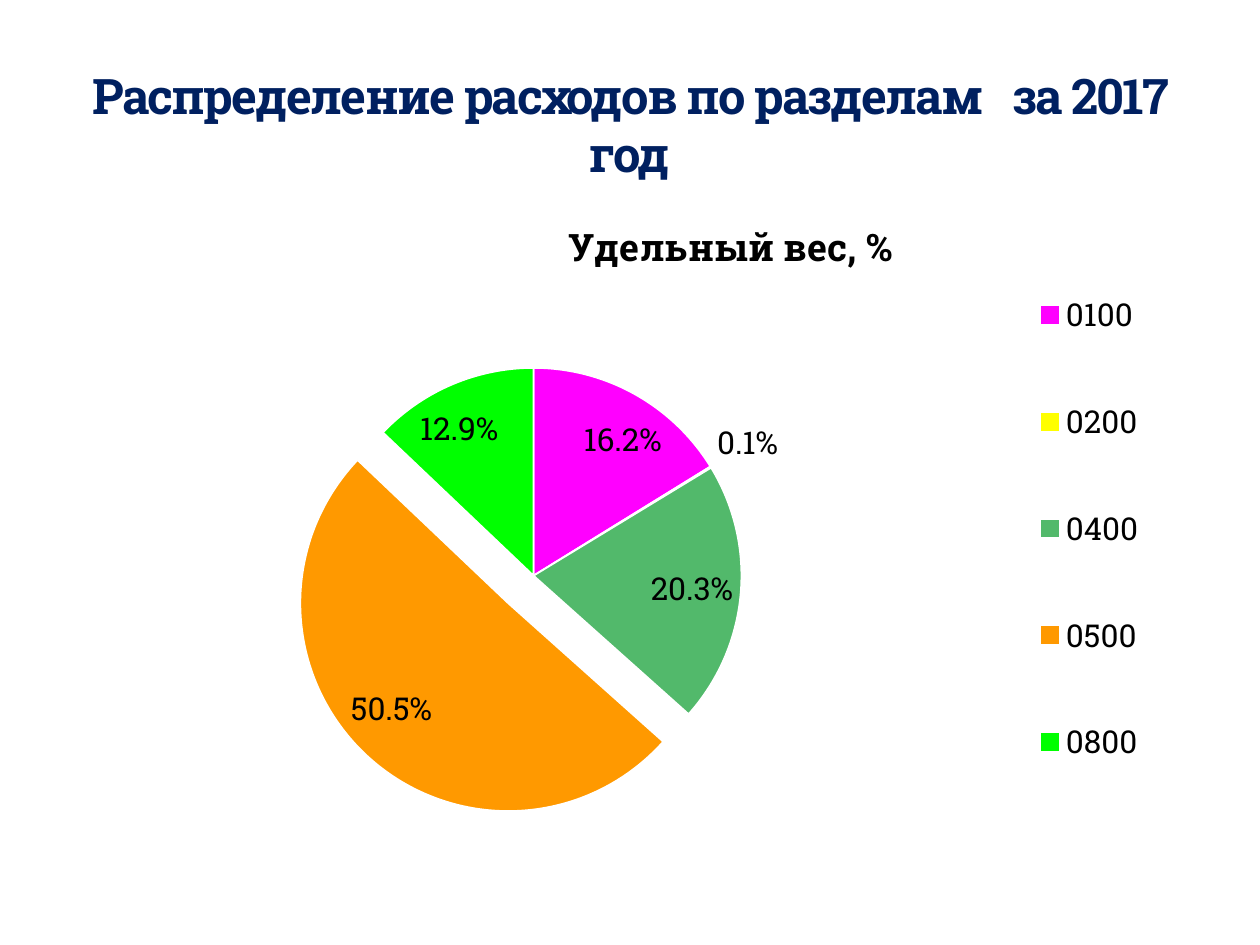
import pptx
import pptx.chart.data
import pptx.dml.color
import pptx.enum.chart
import pptx.enum.text
import pptx.oxml
import pptx.oxml.ns
import pptx.util
from pptx.util import Inches

FONT = "Roboto Slab"
SECTIONS = [
    ("0100", 0.162, "FF00FF"),
    ("0200", 0.001, "FFFF00"),
    ("0400", 0.203, "52B96B"),
    ("0500", 0.505, "FF9900"),
    ("0800", 0.129, "00FF00"),
]
EXPLODED = "0500"


def rgb(color):
    return pptx.dml.color.RGBColor.from_string(color)


def format_font(font, size, color="000000", bold=False):
    font.name = FONT
    font.size = pptx.util.Pt(size)
    font.bold = bold
    font.color.rgb = rgb(color)


def write_text(tf, text, size=18, color="000000", bold=False, spacing=0):
    p = tf.paragraphs[0]
    p.alignment = pptx.enum.text.PP_ALIGN.CENTER
    r = p.add_run()
    r.text = text
    format_font(r.font, size, color, bold)
    if spacing:
        r.font._element.set("spc", str(spacing * 100))


def add_heading(s, text):
    sp = s.shapes.add_textbox(Inches(0.5), Inches(0.17), Inches(9), Inches(1.33))
    tf = sp.text_frame
    tf.word_wrap = True
    tf.vertical_anchor = pptx.enum.text.MSO_ANCHOR.BOTTOM
    write_text(tf, text, size=28, color="002060", bold=True, spacing=-1)


def set_layout(element, inner=False, **fractions):
    """Place a chart part by fractions of the chart's size."""
    for old in element.findall(pptx.oxml.ns.qn("c:layout")):
        element.remove(old)
    target = '<c:layoutTarget val="inner"/>' if inner else ""
    modes = "".join(f'<c:{k}Mode val="edge"/>' for k in "xy")
    places = "".join(f'<c:{k} val="{v}"/>' for k, v in fractions.items())
    layout = pptx.oxml.parse_xml(
        f'<c:layout {pptx.oxml.ns.nsdecls("c")}><c:manualLayout>'
        f"{target}{modes}{places}</c:manualLayout></c:layout>"
    )
    followers = [pptx.oxml.ns.qn(f"c:{n}") for n in ("overlay", "pieChart")]
    next(e for e in element if e.tag in followers).addprevious(layout)


def color_slices(series):
    for i, (name, _, color) in enumerate(SECTIONS):
        point = series.points[i]
        point.format.fill.solid()
        point.format.fill.fore_color.rgb = rgb(color)
        point.format.line.color.rgb = rgb("FFFFFF")
        point.format.line.width = pptx.util.Pt(1)
        if name == EXPLODED:
            explosion = pptx.oxml.parse_xml(
                f'<c:explosion {pptx.oxml.ns.nsdecls("c")} val="18"/>'
            )
            dpt = series._element.findall(pptx.oxml.ns.qn("c:dPt"))[-1]
            dpt.find(pptx.oxml.ns.qn("c:spPr")).addprevious(explosion)


def add_pie(s, title):
    data = pptx.chart.data.CategoryChartData(number_format="0.0%")
    data.categories = [name for name, _, _ in SECTIONS]
    data.add_series("Series 1", [value for _, value, _ in SECTIONS])
    chart = s.shapes.add_chart(
        pptx.enum.chart.XL_CHART_TYPE.PIE,
        Inches(0.5), Inches(1.67), Inches(9), Inches(5), data,
    ).chart
    format_font(chart.font, 18)

    write_text(chart.chart_title.text_frame, title, size=21.6, bold=True)
    chart.chart_title.include_in_layout = False
    set_layout(chart.chart_title._element, x=0.44, y=0)

    chart.has_legend = True
    chart.legend.position = pptx.enum.chart.XL_LEGEND_POSITION.RIGHT
    chart.legend.include_in_layout = False
    format_font(chart.legend.font, 18)
    set_layout(chart.legend._element, x=0.84, y=0.03, w=0.13, h=0.95)

    plot = chart.plots[0]
    plot.vary_by_categories = True
    color_slices(plot.series[0])
    plot.has_data_labels = True
    labels = plot.data_labels
    labels.show_value = True
    labels.show_percentage = False
    labels.number_format = "0.0%"
    labels.number_format_is_linked = False
    labels.position = pptx.enum.chart.XL_LABEL_POSITION.BEST_FIT
    format_font(labels.font, 18)
    set_layout(plot._element.getparent(), inner=True, x=0.23, y=0.25, w=0.37, h=0.66)


def main():
    prs = pptx.Presentation()
    prs.slide_width, prs.slide_height = Inches(10), Inches(7.5)
    s = prs.slides.add_slide(prs.slide_layouts[6])
    add_pie(s, "Удельный вес, %")
    add_heading(s, "Распределение расходов по разделам   за 2017 год")
    prs.save("out.pptx")


if __name__ == "__main__":
    main()
